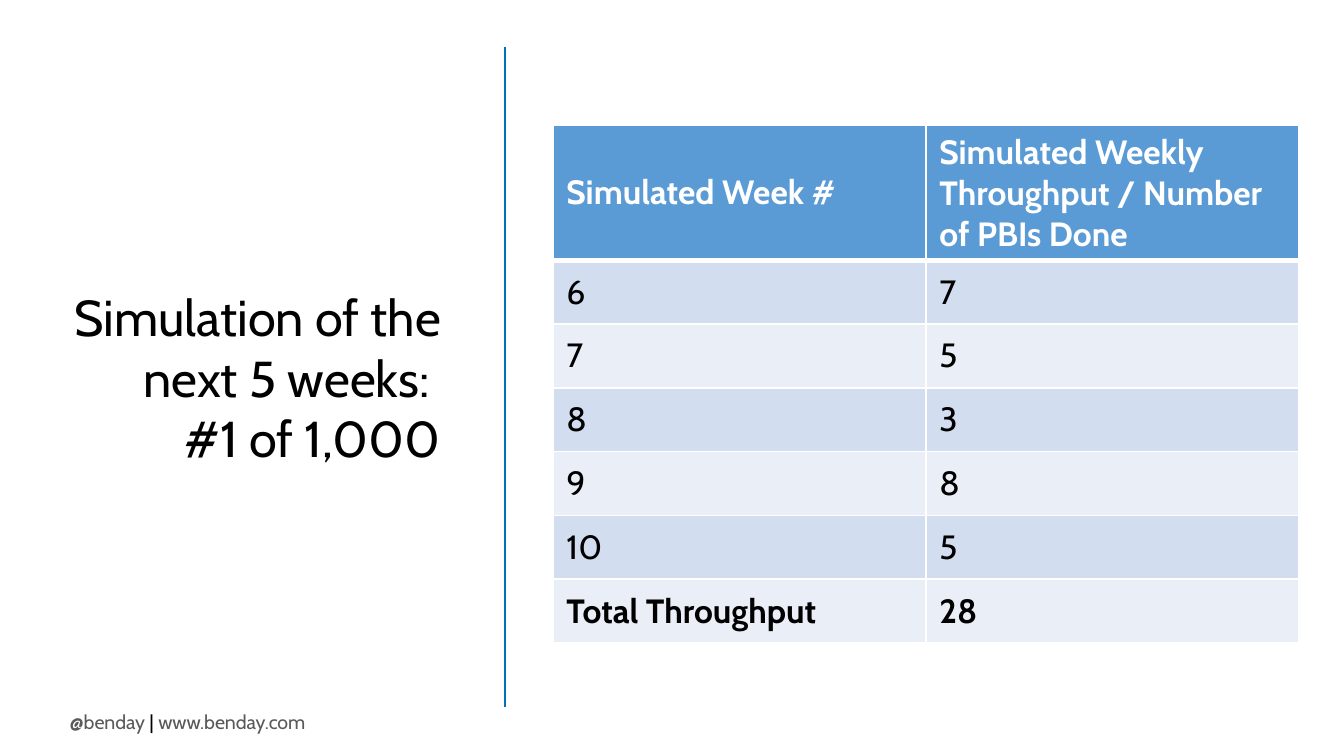
from lxml import etree
from pptx import Presentation
from pptx import util as u
from pptx.dml.color import RGBColor
from pptx.enum import shapes, text
from pptx.oxml import ns

PX = u.Inches(1) // 200
FONT = "Cabin"
COLORS = {
    "text": "000000",
    "muted": "595959",
    "divider": "0072BC",
    "white": "FFFFFF",
    "header": "5B9BD5",
    "odd_row": "D2DEEF",
    "even_row": "EAEFF7",
}
HEADERS = ("Simulated Week #", "Simulated Weekly Throughput / Number of PBIs Done")
THROUGHPUT = {6: 7, 7: 5, 8: 3, 9: 8, 10: 5}


def px(*lengths):
    """Convert pixel lengths to EMU."""
    return [u.Emu(length * PX) for length in lengths]


def color(name):
    """Look up a named colour."""
    return RGBColor.from_string(COLORS[name])


def style(font, size, color_name, bold=False):
    """Set the face, size, colour and weight of a font."""
    font.name = FONT
    font.size = u.Pt(size)
    font.bold = bold
    font.color.rgb = color(color_name)


def add_title(slide, box):
    """Place the right-aligned slide title."""
    title = slide.shapes.title
    title.left, title.top, title.width, title.height = px(*box)
    frame = title.text_frame
    frame.text = "Simulation of the next 5 weeks: \v#1 of 1,000"
    frame.word_wrap = True
    frame.auto_size = text.MSO_AUTO_SIZE.NONE
    frame.vertical_anchor = text.MSO_ANCHOR.MIDDLE
    paragraph = frame.paragraphs[0]
    paragraph.alignment = text.PP_ALIGN.RIGHT
    style(paragraph.font, 27, "text")


def add_divider(slide, box):
    """Draw the vertical rule along the left edge of its box."""
    left, top, width, height = box
    divider = slide.shapes.add_connector(
        shapes.MSO_CONNECTOR.STRAIGHT, *px(left, top, left + width, top + height)
    )
    divider.line.color.rgb = color("divider")
    divider.line.width = u.Pt(1)
    etree.SubElement(divider._element.spPr, ns.qn("a:effectLst"))


def add_footer(slide, box):
    """Write the contact line."""
    frame = slide.shapes.add_textbox(*px(*box)).text_frame
    frame.word_wrap = False
    paragraph = frame.paragraphs[0]
    parts = (("@benday", "muted"), (" | ", "text"), ("www.benday.com", "muted"))
    for words, color_name in parts:
        run = paragraph.add_run()
        run.text = words
        style(run.font, 10.5, color_name)


def set_borders(cell, top, bottom):
    """Give a cell white borders, with top and bottom widths in points."""
    properties = cell._tc.get_or_add_tcPr()
    for side, width in (("L", 1), ("R", 1), ("T", top), ("B", bottom)):
        line = etree.SubElement(properties, ns.qn(f"a:ln{side}"), w=str(u.Pt(width)))
        fill = etree.SubElement(line, ns.qn("a:solidFill"))
        etree.SubElement(fill, ns.qn("a:srgbClr"), val=COLORS["white"])


def add_table(slide, box, header_height):
    """Build the simulated throughput table with its total row."""
    total = ("Total Throughput", sum(THROUGHPUT.values()))
    rows = [HEADERS, *THROUGHPUT.items(), total]
    last = len(rows) - 1
    table = slide.shapes.add_table(len(rows), len(HEADERS), *px(*box)).table
    for column in table.columns:
        column.width = px(box[2] // len(HEADERS))[0]
    row_height = (box[3] - header_height) // last
    for index, values in enumerate(rows):
        is_header = index == 0
        table.rows[index].height = px(header_height if is_header else row_height)[0]
        fill = "header" if is_header else "odd_row" if index % 2 else "even_row"
        for cell, value in zip(table.rows[index].cells, values):
            set_borders(cell, 3 if index == 1 else 1, 3 if is_header else 1)
            cell.fill.solid()
            cell.fill.fore_color.rgb = color(fill)
            cell.vertical_anchor = text.MSO_ANCHOR.MIDDLE
            cell.text = str(value)
            font = cell.text_frame.paragraphs[0].font
            style(font, 18, "white" if is_header else "text", index in (0, last))


def main():
    """Build and save the slide."""
    presentation = Presentation()
    presentation.slide_width, presentation.slide_height = px(2000, 1125)
    slide = presentation.slides.add_slide(presentation.slide_layouts[5])
    add_footer(slide, (84, 1046, 416, 56))
    add_divider(slide, (752, 70, 0, 982))
    add_title(slide, (58, 262, 618, 598))
    add_table(slide, (823, 187, 1110, 772), 200)
    presentation.save("out.pptx")


if __name__ == "__main__":
    main()
